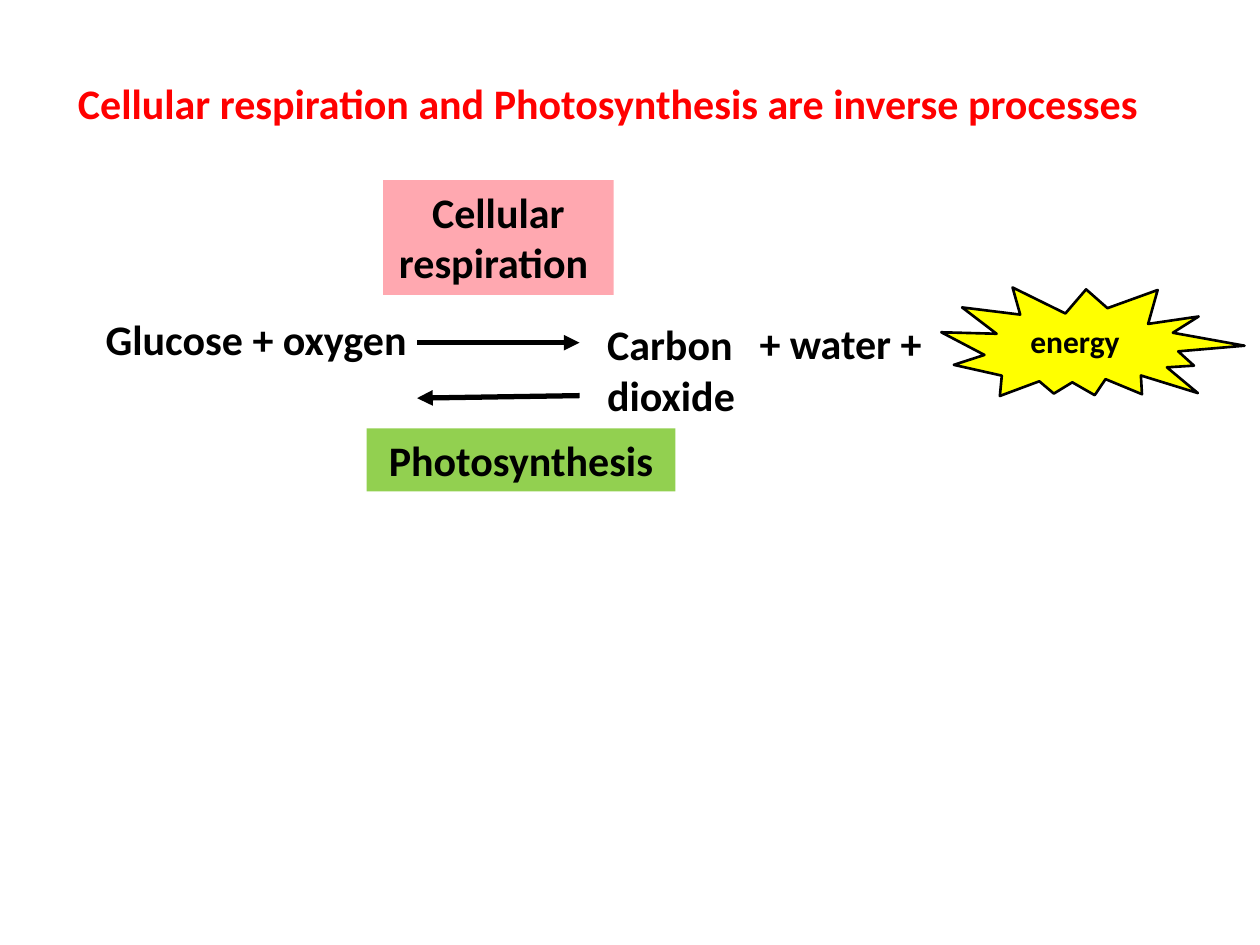
import pptx
import pptx.dml.color
import pptx.enum.shapes
import pptx.enum.text
import pptx.oxml.ns
import pptx.util
from dataclasses import dataclass
from lxml import etree
from typing import Optional

Inches = pptx.util.Inches
RGBColor = pptx.dml.color.RGBColor


@dataclass(frozen=True)
class Theme:
    font: str = "Calibri"
    ink: str = "000000"
    title: str = "FF0000"
    respiration: str = "FFA8B0"
    photosynthesis: str = "92D050"
    energy: str = "FFFF00"
    body_size: int = 24
    energy_size: int = 18
    arrow_width: float = 3
    outline_width: float = 1.5


THEME = Theme()


@dataclass(frozen=True)
class Label:
    text: str
    left: float
    top: float
    width: float
    height: float = 0.5
    size: int = THEME.body_size
    color: str = THEME.ink
    fill: Optional[str] = None
    wrap: bool = True


@dataclass(frozen=True)
class Arrow:
    start: tuple[float, float]
    end: tuple[float, float]


LABELS = [
    Label("energy", 8.08, 2.51, 1.03, 0.41, size=THEME.energy_size),
    Label("Carbon dioxide", 4.72, 2.48, 1.28, 0.91),
    Label("Glucose + oxygen", 0.74, 2.44, 2.69, wrap=False),
    Label("+ water +", 5.93, 2.47, 1.5, wrap=False),
    Label("Cellular respiration and Photosynthesis are inverse processes",
          0.52, 0.57, 8.92, color=THEME.title),
    Label("Cellular respiration ", 3.04, 1.43, 1.83, 0.91, fill=THEME.respiration),
    Label("Photosynthesis", 2.91, 3.4, 2.45, fill=THEME.photosynthesis),
]

ARROWS = [
    Arrow((3.31, 2.72), (4.6, 2.72)),
    Arrow((4.6, 3.14), (3.31, 3.16)),
]


def draw_label(slide: pptx.slide.Slide, label: Label) -> None:
    bounds = [Inches(value) for value in (label.left, label.top, label.width, label.height)]
    if label.fill:
        shape = slide.shapes.add_shape(pptx.enum.shapes.MSO_SHAPE.RECTANGLE, *bounds)
        shape.shadow.inherit = False
        shape.fill.solid()
        shape.fill.fore_color.rgb = RGBColor.from_string(label.fill)
        shape.line.fill.background()
    else:
        shape = slide.shapes.add_textbox(*bounds)
    frame = shape.text_frame
    frame.word_wrap = label.wrap
    frame.auto_size = pptx.enum.text.MSO_AUTO_SIZE.SHAPE_TO_FIT_TEXT
    frame.vertical_anchor = pptx.enum.text.MSO_ANCHOR.TOP
    paragraph = frame.paragraphs[0]
    alignment = pptx.enum.text.PP_ALIGN
    paragraph.alignment = alignment.CENTER if label.fill else alignment.LEFT
    run = paragraph.add_run()
    run.text = label.text
    run.font.name = THEME.font
    run.font.size = pptx.util.Pt(label.size)
    run.font.bold = True
    run.font.color.rgb = RGBColor.from_string(label.color)


def draw_arrow(slide: pptx.slide.Slide, arrow: Arrow) -> None:
    connector = slide.shapes.add_connector(
        pptx.enum.shapes.MSO_CONNECTOR.STRAIGHT,
        *[Inches(value) for value in arrow.start + arrow.end])
    connector.line.color.rgb = RGBColor.from_string(THEME.ink)
    connector.line.width = pptx.util.Pt(THEME.arrow_width)
    qualified = pptx.oxml.ns.qn
    properties = connector.line._get_or_add_ln()
    etree.SubElement(properties, qualified("a:tailEnd"), type="triangle")
    etree.SubElement(connector._element.spPr, qualified("a:effectLst"))


def draw_energy_burst(slide: pptx.slide.Slide) -> None:
    burst = slide.shapes.add_shape(
        pptx.enum.shapes.MSO_SHAPE.EXPLOSION2,
        Inches(7.47), Inches(2.22), Inches(2.39), Inches(1.04))
    burst.rotation = 9.7
    burst.shadow.inherit = False
    burst.fill.solid()
    burst.fill.fore_color.rgb = RGBColor.from_string(THEME.energy)
    burst.line.color.rgb = RGBColor.from_string(THEME.ink)
    burst.line.width = pptx.util.Pt(THEME.outline_width)


def main() -> None:
    presentation = pptx.Presentation()
    presentation.slide_width = Inches(10)
    presentation.slide_height = Inches(7.5)
    slide = presentation.slides.add_slide(presentation.slide_layouts[6])
    draw_energy_burst(slide)
    for label in LABELS:
        draw_label(slide, label)
    for arrow in ARROWS:
        draw_arrow(slide, arrow)
    presentation.save("out.pptx")


if __name__ == "__main__":
    main()
